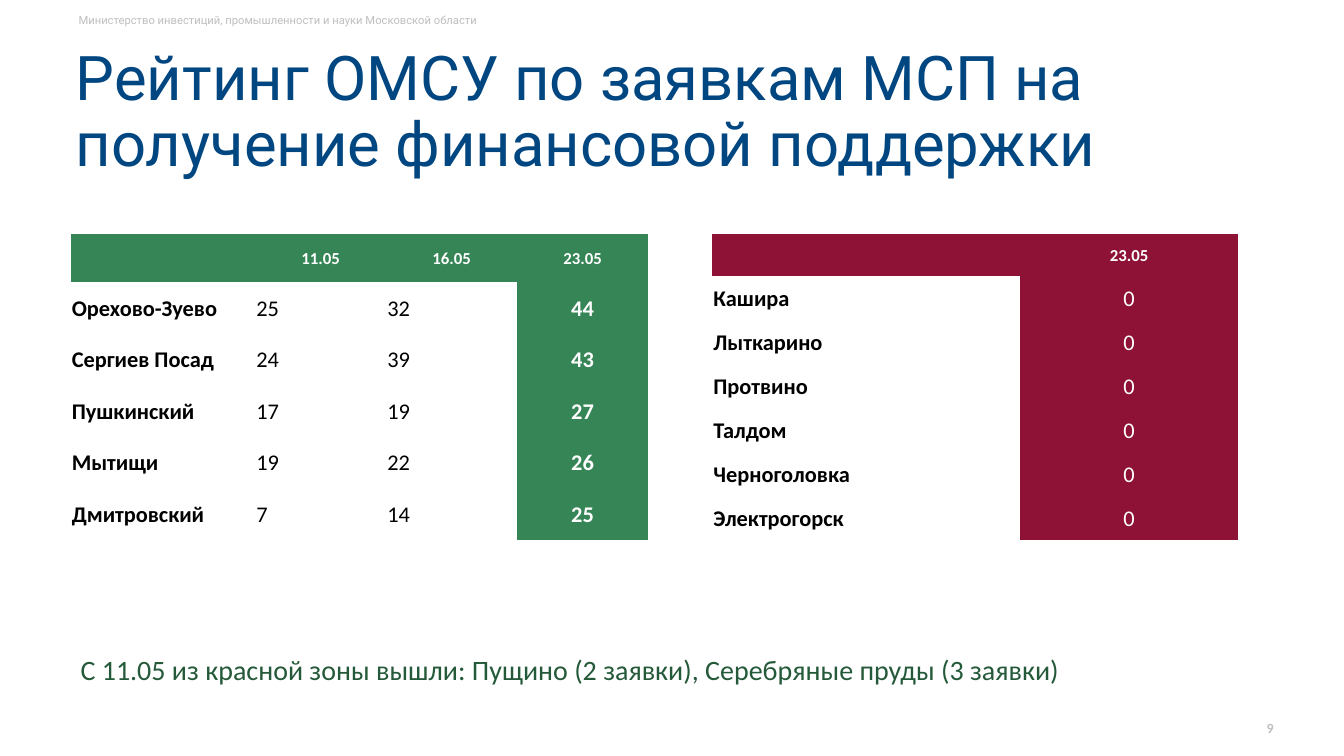
from dataclasses import dataclass

from pptx import Presentation
from pptx.dml.color import RGBColor
from pptx.enum.text import MSO_ANCHOR, PP_ALIGN
from pptx.util import Cm, Pt

LEFT, CENTER, RIGHT = PP_ALIGN.LEFT, PP_ALIGN.CENTER, PP_ALIGN.RIGHT
TOP, MIDDLE = MSO_ANCHOR.TOP, MSO_ANCHOR.MIDDLE
PLAIN_TABLE_STYLE = "{2D5ABB26-0587-4C30-8999-92F81FD0307C}"


@dataclass(frozen=True)
class Theme:
    heading_font: str = "Roboto"
    body_font: str = "Calibri"
    blue: str = "004680"
    green: str = "368556"
    dark_green: str = "245939"
    red: str = "8E1235"
    grey: str = "BFBFBF"
    black: str = "000000"
    white: str = "FFFFFF"
    title_size: int = 44
    note_size: int = 20
    cell_size: int = 16
    header_size: int = 12
    number_size: int = 10
    ministry_size: int = 8


class SlideBuilder:
    def __init__(self, slide, theme):
        self.slide = slide
        self.theme = theme

    def add_run(self, paragraph, text, size, color, font=None, bold=False, align=LEFT):
        paragraph.alignment = align
        run = paragraph.add_run()
        run.text = text
        run.font.name = font or self.theme.body_font
        run.font.size = Pt(size)
        run.font.bold = bold
        run.font.color.rgb = RGBColor.from_string(color)

    def add_text(self, box, text, size, color, anchor=TOP, side_inset=0.25,
                 line_spacing=None, **style):
        """Add a one-paragraph text box; box is left, top, width, height in cm."""
        frame = self.slide.shapes.add_textbox(*map(Cm, box)).text_frame
        frame.word_wrap = True
        frame.vertical_anchor = anchor
        frame.margin_left = frame.margin_right = Cm(side_inset)
        frame.margin_top = frame.margin_bottom = Cm(0.13)
        paragraph = frame.paragraphs[0]
        if line_spacing:
            paragraph.line_spacing = line_spacing
        self.add_run(paragraph, text, size, color, **style)

    def add_rating(self, left, top, widths, header_height, row_height,
                   accent, rows, bold_result):
        """Add a table whose header row and last column carry the accent fill."""
        height = header_height + row_height * (len(rows) - 1)
        table = self.slide.shapes.add_table(
            len(rows), len(widths), Cm(left), Cm(top), Cm(sum(widths)), Cm(height)
        ).table
        table.first_row = table.horz_banding = False
        table._tbl.tblPr[0].text = PLAIN_TABLE_STYLE
        for column, width in zip(table.columns, widths):
            column.width = Cm(width)
        for row_index, values in enumerate(rows):
            is_header = row_index == 0
            table.rows[row_index].height = Cm(header_height if is_header else row_height)
            for column_index, value in enumerate(values):
                cell = table.cell(row_index, column_index)
                is_result = column_index == len(widths) - 1
                bold = is_header or column_index == 0 or (is_result and bold_result)
                self.fill_cell(cell, value, accent if is_header or is_result else None,
                               self.theme.header_size if is_header else self.theme.cell_size,
                               bold)

    def fill_cell(self, cell, value, accent, size, bold):
        cell.vertical_anchor = MIDDLE
        cell.margin_left = cell.margin_right = cell.margin_top = Cm(0.03)
        cell.margin_bottom = Cm(0)
        if accent:
            cell.fill.solid()
            cell.fill.fore_color.rgb = RGBColor.from_string(accent)
        else:
            cell.fill.background()
        if value:
            self.add_run(cell.text_frame.paragraphs[0], value, size,
                         self.theme.white if accent else self.theme.black,
                         bold=bold, align=CENTER if accent else LEFT)


LEADERS = [
    ("", "11.05", "16.05", "23.05"),
    ("Орехово-Зуево", "25", "32", "44"),
    ("Сергиев Посад", "24", "39", "43"),
    ("Пушкинский", "17", "19", "27"),
    ("Мытищи", "19", "22", "26"),
    ("Дмитровский", "7", "14", "25"),
]
RED_ZONE = ["Кашира", "Лыткарино", "Протвино", "Талдом", "Черноголовка", "Электрогорск"]


def main():
    presentation = Presentation()
    presentation.slide_width, presentation.slide_height = Cm(33.87), Cm(19.05)
    theme = Theme()
    builder = SlideBuilder(
        presentation.slides.add_slide(presentation.slide_layouts[6]), theme)

    builder.add_text((1.85, 0.2, 14.35, 0.61),
                     "Министерство инвестиций, промышленности и науки Московской области",
                     theme.ministry_size, theme.grey, side_inset=0.13,
                     font=theme.heading_font)
    builder.add_text((1.78, 1.02, 30.33, 3.68),
                     "Рейтинг ОМСУ по заявкам МСП на получение финансовой поддержки",
                     theme.title_size, theme.blue, anchor=MIDDLE, side_inset=0.13,
                     line_spacing=0.9, font=theme.heading_font)
    builder.add_rating(1.78, 5.89, [4.65, 3.3, 3.3, 3.3], 1.22, 1.3,
                       theme.green, LEADERS, bold_result=True)
    builder.add_rating(17.95, 5.89, [7.75, 5.51], 1.06, 1.11, theme.red,
                       [("", "23.05")] + [(town, "0") for town in RED_ZONE],
                       bold_result=False)
    builder.add_text((1.78, 16.31, 25.43, 1.12),
                     "С 11.05 из красной зоны вышли: Пущино (2 заявки), "
                     "Серебряные пруды (3 заявки)",
                     theme.note_size, theme.dark_green)
    builder.add_text((24.46, 18.03, 7.89, 0.64), "9", theme.number_size, theme.grey,
                     anchor=MIDDLE, bold=True, align=RIGHT)
    presentation.save("out.pptx")


if __name__ == "__main__":
    main()
